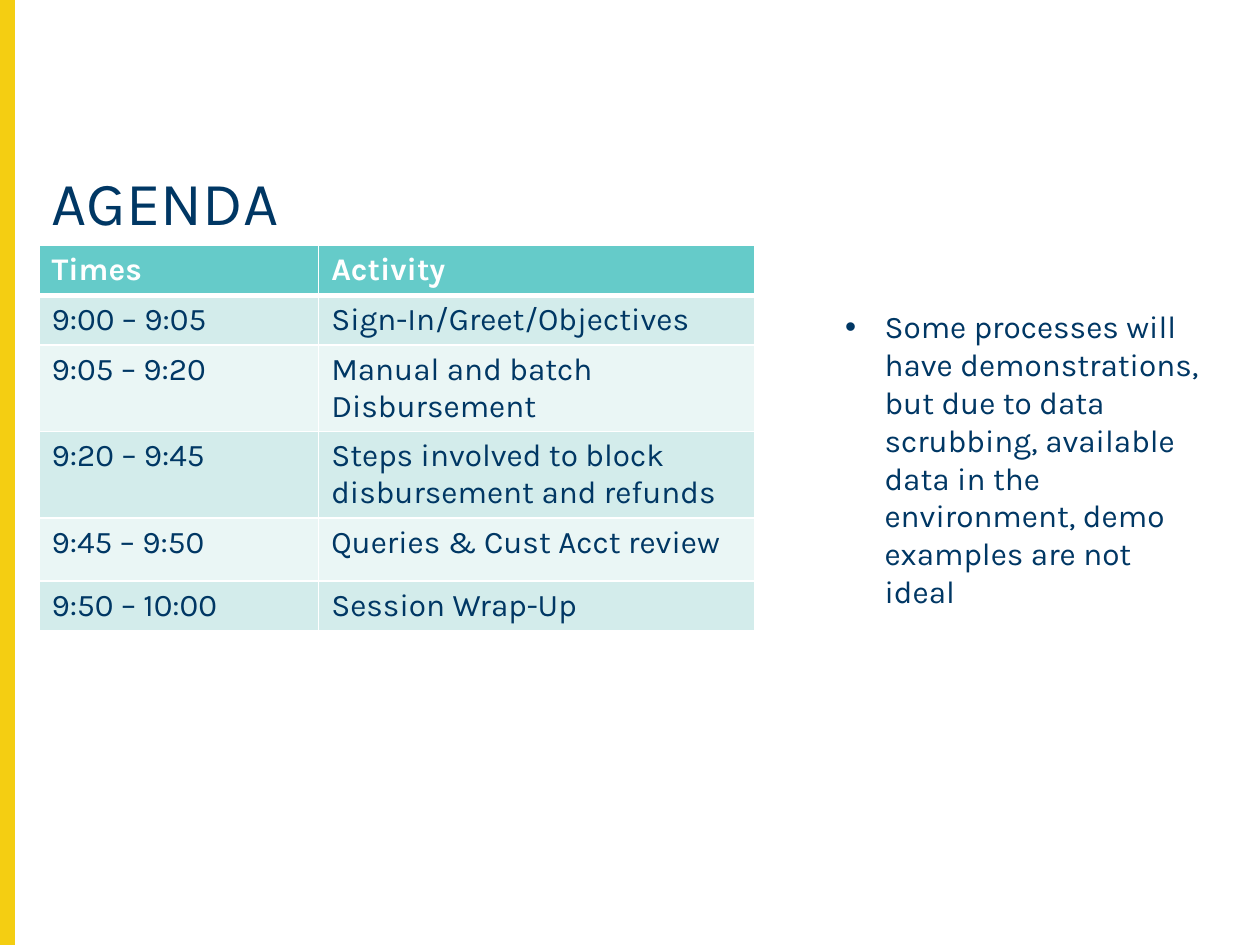
from dataclasses import dataclass

from lxml.etree import SubElement
from pptx import Presentation
from pptx.dml.color import RGBColor
from pptx.enum.shapes import MSO_SHAPE as Shape
from pptx.enum.text import MSO_ANCHOR as Anchor, MSO_AUTO_SIZE as AutoSize, PP_ALIGN as Align
from pptx.oxml.ns import qn
from pptx.util import Pt

NAVY = RGBColor(0x00, 0x37, 0x64)
YELLOW = RGBColor(0xF4, 0xCE, 0x12)
TEAL = RGBColor(0x65, 0xCB, 0xC9)
BAND_DARK = RGBColor(0xD3, 0xEC, 0xEB)
BAND_LIGHT = RGBColor(0xEA, 0xF6, 0xF5)
WHITE = RGBColor(0xFF, 0xFF, 0xFF)
FONT = "Karla"
LEFT = 22.3
COL_WIDTHS = (159.8, 249.1)


@dataclass
class Row:
    time: str
    activity: str
    height: float = 26.6


ROWS = [
    Row("Times", "Activity"),
    Row("9:00 – 9:05", "Sign-In/Greet/Objectives"),
    Row("9:05 – 9:20", "Manual and batch Disbursement"),
    Row("9:20 – 9:45", "Steps involved to block disbursement and refunds", 36),
    Row("9:45 – 9:50", "Queries & Cust Acct review", 36),
    Row("9:50 – 10:00", "Session Wrap-Up"),
]
NOTE = ("Some processes will have demonstrations, but due to data scrubbing, "
        "available data in the environment, demo examples are not ideal")


def style(p, size: float, color: RGBColor = NAVY, bold: bool = False) -> None:
    p.font.name = FONT
    p.font.size = Pt(size)
    p.font.bold = bold
    p.font.color.rgb = color


def set_borders(cell, bottom: float) -> None:
    tc_pr = cell._tc.get_or_add_tcPr()
    widths = {"a:lnL": 1, "a:lnR": 1, "a:lnT": 1, "a:lnB": bottom}
    for i, (tag, width) in enumerate(widths.items()):
        ln = tc_pr.makeelement(qn(tag), {"w": str(Pt(width))})
        fill = SubElement(ln, qn("a:solidFill"))
        SubElement(fill, qn("a:srgbClr"), val=str(WHITE))
        tc_pr.insert(i, ln)


def add_bar(s) -> None:
    sp = s.shapes.add_shape(Shape.RECTANGLE, 0, 0, Pt(7.9), Pt(540))
    sp.shadow.inherit = False
    sp.fill.solid()
    sp.fill.fore_color.rgb = YELLOW
    sp.line.color.rgb = YELLOW
    sp.line.width = Pt(1)


def add_title(s, text: str) -> None:
    sp = s.shapes.title
    sp.left, sp.top, sp.width, sp.height = Pt(LEFT), Pt(93.6), Pt(671.8), Pt(56.9)
    tf = sp.text_frame
    tf.text = text
    tf.auto_size = AutoSize.NONE
    tf.vertical_anchor = Anchor.TOP
    tf.margin_top = Pt(5)
    p = tf.paragraphs[0]
    p.alignment = Align.LEFT
    p.line_spacing = 0.9
    style(p, 35)


def add_agenda(s, rows: list[Row]) -> None:
    height = sum(row.height for row in rows)
    table = s.shapes.add_table(len(rows), len(COL_WIDTHS), Pt(LEFT), Pt(140.4),
                               Pt(sum(COL_WIDTHS)), Pt(height)).table
    for col, width in zip(table.columns, COL_WIDTHS):
        col.width = Pt(width)
    for i, row in enumerate(rows):
        table.rows[i].height = Pt(row.height)
        header = i == 0
        band = TEAL if header else BAND_DARK if i % 2 else BAND_LIGHT
        for j, text in enumerate((row.time, row.activity)):
            cell = table.cell(i, j)
            cell.text = text
            cell.fill.solid()
            cell.fill.fore_color.rgb = band
            style(cell.text_frame.paragraphs[0], 18, WHITE if header else NAVY, header)
            set_borders(cell, 3 if header else 1)


def add_note(s, text: str) -> None:
    tf = s.shapes.add_textbox(Pt(475.9), Pt(172.1), Pt(218.9), Pt(159.8)).text_frame
    tf.word_wrap = True
    tf.auto_size = AutoSize.SHAPE_TO_FIT_TEXT
    tf.text = text
    p = tf.paragraphs[0]
    style(p, 18)
    p_pr = p._p.get_or_add_pPr()
    p_pr.set("marL", str(Pt(22.5)))
    p_pr.set("indent", str(-Pt(22.5)))
    bullet_font = p_pr.makeelement(qn("a:buFont"), {"typeface": "Arial"})
    bullet = p_pr.makeelement(qn("a:buChar"), {"char": "•"})
    p_pr.insert(0, bullet_font)
    p_pr.insert(1, bullet)


def main() -> None:
    prs = Presentation()
    prs.slide_width, prs.slide_height = Pt(720), Pt(540)
    s = prs.slides.add_slide(prs.slide_layouts[5])
    add_bar(s)
    add_title(s, "AGENDA")
    add_agenda(s, ROWS)
    add_note(s, NOTE)
    prs.save("out.pptx")


if __name__ == "__main__":
    main()
